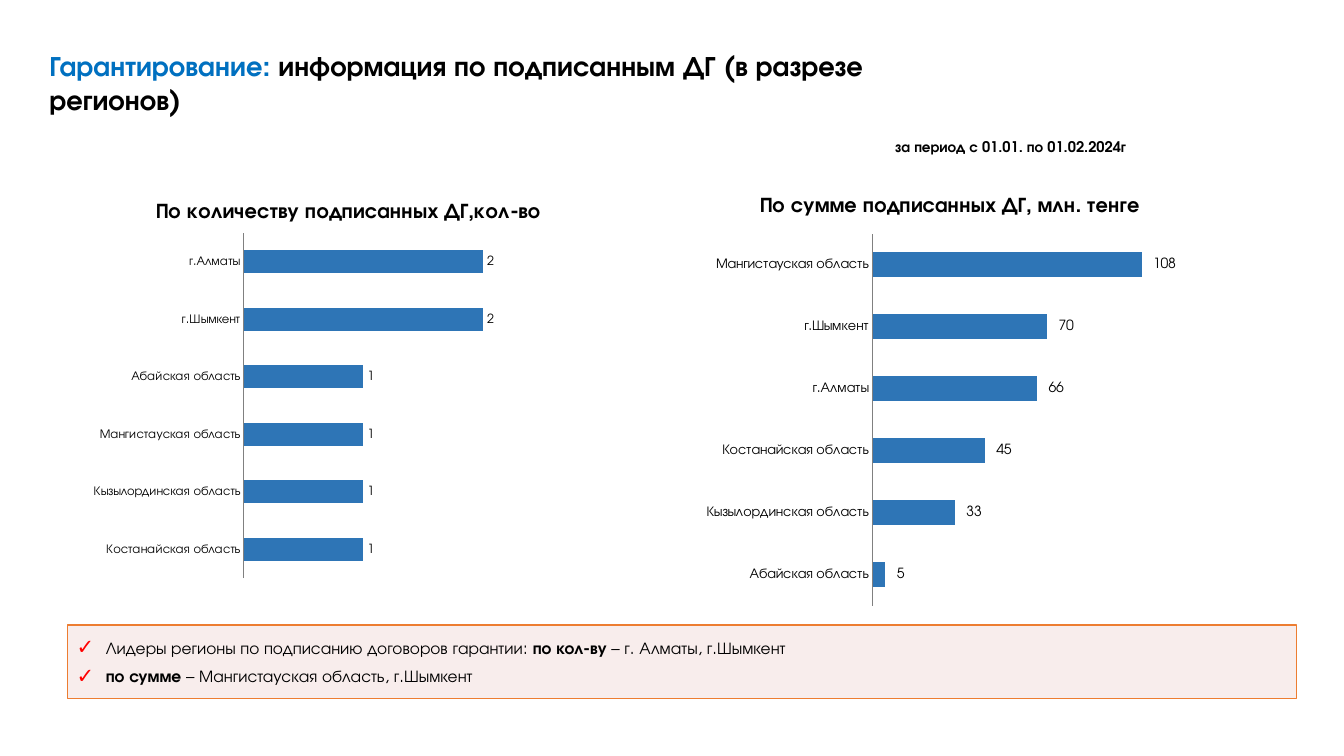
from lxml import etree
from pptx import Presentation
from pptx.chart.data import CategoryChartData
from pptx.dml.color import RGBColor
from pptx.enum.chart import XL_CHART_TYPE, XL_LABEL_POSITION, XL_TICK_LABEL_POSITION, XL_TICK_MARK
from pptx.enum.text import MSO_ANCHOR, MSO_AUTO_SIZE, PP_ALIGN
from pptx.oxml.ns import qn
from pptx.util import Inches, Pt

BAR_CLUSTERED = XL_CHART_TYPE.BAR_CLUSTERED
OUTSIDE_END = XL_LABEL_POSITION.OUTSIDE_END
NO_LABELS = XL_TICK_LABEL_POSITION.NONE
NO_TICKS = XL_TICK_MARK.NONE
TOP, MIDDLE = MSO_ANCHOR.TOP, MSO_ANCHOR.MIDDLE
NO_FIT = MSO_AUTO_SIZE.NONE
LEFT = PP_ALIGN.LEFT

FONT = "TeX Gyre Adventor"
BLACK = RGBColor(0x00, 0x00, 0x00)
BLUE = RGBColor(0x00, 0x70, 0xC0)
BAR_BLUE = RGBColor(0x2E, 0x75, 0xB6)
AXIS_GRAY = RGBColor(0x80, 0x80, 0x80)
ORANGE = RGBColor(0xED, 0x7D, 0x31)
PINK = RGBColor(0xF2, 0xDC, 0xDB)
RED = RGBColor(0xFF, 0x00, 0x00)

TITLE = [[("Гарантирование: ", True, BLUE),
          ("информация по подписанным ДГ (в разрезе регионов)", True, BLACK)]]
PERIOD = [[("за период с 01.01. по 01.02.2024г", True, BLACK)]]
LEADERS = [
    [("Лидеры регионы по подписанию договоров гарантии: ", False, BLACK),
     ("по кол-ву", True, BLACK),
     (" – г. Алматы, г.Шымкент", False, BLACK)],
    [("по сумме ", True, BLACK),
     ("– Мангистауская область, г.Шымкент", False, BLACK)],
]
CHARTS = [
    {"title": "По количеству подписанных ДГ,кол-во",
     "box": (0.76, 1.78, 5.35, 4.1), "size": 9, "maximum": 2.5, "format": "General",
     "title_layout": {"x": 0.14, "y": 0.04},
     "plot_layout": {"x": 0.31, "y": 0.13, "w": 0.555, "h": 0.835},
     "values": {"Костанайская область": 1, "Кызылординская область": 1,
                "Мангистауская область": 1, "Абайская область": 1,
                "г.Шымкент": 2, "г.Алматы": 2}},
    {"title": "По сумме подписанных ДГ, млн. тенге",
     "box": (6.23, 1.71, 6.34, 4.45), "size": 10, "maximum": 120,
     "format": '_-* #\\ ##0_р_._-;\\-* #\\ ##0_р_._-;_-* "-"',
     "title_layout": {"x": 0.2, "y": 0.04},
     "plot_layout": {"x": 0.383, "y": 0.137, "w": 0.467, "h": 0.829},
     "values": {"Абайская область": 5, "Кызылординская область": 33,
                "Костанайская область": 45, "г.Алматы": 66,
                "г.Шымкент": 70, "Мангистауская область": 108}},
]


def place(shape, left, top, width, height):
    shape.left, shape.top = Inches(left), Inches(top)
    shape.width, shape.height = Inches(width), Inches(height)


def format_font(font, size, bold=False, color=BLACK):
    font.name, font.size, font.bold = FONT, Pt(size), bold
    font.color.rgb = color


def add_bullet(paragraph, character):
    properties = paragraph._p.get_or_add_pPr()
    properties.set("marL", str(Inches(0.3)))
    properties.set("indent", str(Inches(-0.29)))
    color = etree.SubElement(properties, qn("a:buClr"))
    etree.SubElement(color, qn("a:srgbClr"), val=str(RED))
    etree.SubElement(properties, qn("a:buSzPct"), val="125000")
    etree.SubElement(properties, qn("a:buChar"), char=character)


def write_text(shape, paragraphs, size, anchor=TOP, wrap=True, bullet=None, space_after=0):
    frame = shape.text_frame
    frame.auto_size, frame.word_wrap, frame.vertical_anchor = NO_FIT, wrap, anchor
    for index, runs in enumerate(paragraphs):
        paragraph = frame.add_paragraph() if index else frame.paragraphs[0]
        paragraph.alignment = LEFT
        paragraph.line_spacing = 1.0
        paragraph.space_before, paragraph.space_after = Pt(0), Pt(space_after)
        if bullet:
            add_bullet(paragraph, bullet)
        for text, bold, color in runs:
            run = paragraph.add_run()
            run.text = text
            format_font(run.font, size, bold, color)


def set_layout(parent, position, shares):
    for existing in parent.findall(qn("c:layout")):
        parent.remove(existing)
    layout = etree.Element(qn("c:layout"))
    manual = etree.SubElement(layout, qn("c:manualLayout"))
    if "w" in shares:
        etree.SubElement(manual, qn("c:layoutTarget"), val="inner")
    for axis in ("x", "y"):
        etree.SubElement(manual, qn(f"c:{axis}Mode"), val="edge")
    for name, share in shares.items():
        etree.SubElement(manual, qn(f"c:{name}"), val=str(share))
    parent.insert(position, layout)


def add_region_chart(slide, content):
    data = CategoryChartData()
    data.categories = list(content["values"])
    data.add_series("Series 1", list(content["values"].values()))
    box = [Inches(length) for length in content["box"]]
    chart = slide.shapes.add_chart(BAR_CLUSTERED, *box, data).chart
    format_font(chart.font, content["size"])
    chart.has_legend = False

    chart.has_title = True
    title = chart.chart_title
    title.include_in_layout = False
    paragraph = title.text_frame.paragraphs[0]
    run = paragraph.add_run()
    run.text = content["title"]
    format_font(run.font, 15, True)
    set_layout(title._element, 1, content["title_layout"])
    set_layout(chart._chartSpace.chart.plotArea, 0, content["plot_layout"])

    categories = chart.category_axis
    categories.major_tick_mark = categories.minor_tick_mark = NO_TICKS
    categories.format.line.color.rgb = AXIS_GRAY
    categories.format.line.width = Pt(0.75)
    format_font(categories.tick_labels.font, content["size"])
    values = chart.value_axis
    values.minimum_scale, values.maximum_scale = 0, content["maximum"]
    values.has_major_gridlines = False
    values.tick_label_position = NO_LABELS
    values.visible = False

    plot = chart.plots[0]
    plot.gap_width = 150
    plot.vary_by_categories = False
    bars = plot.series[0].format.fill
    bars.solid()
    bars.fore_color.rgb = BAR_BLUE
    plot.has_data_labels = True
    labels = plot.data_labels
    labels.show_value = True
    labels.position = OUTSIDE_END
    labels.number_format, labels.number_format_is_linked = content["format"], False
    format_font(labels.font, content["size"])


def main():
    presentation = Presentation()
    presentation.slide_width, presentation.slide_height = Inches(13.33), Inches(7.5)
    slide = presentation.slides.add_slide(presentation.slide_layouts[1])

    title = slide.shapes.title
    place(title, 0.39, 0.43, 9.14, 0.77)
    write_text(title, TITLE, 20)

    period = slide.shapes.add_textbox(Inches(8.78), Inches(1.32), Inches(2.63), Inches(0.28))
    write_text(period, PERIOD, 10.5, wrap=False)

    leaders = slide.placeholders[1]
    place(leaders, 0.67, 6.2, 12.19, 0.73)
    leaders.fill.solid()
    leaders.fill.fore_color.rgb = PINK
    fill_color = leaders._element.spPr.find(qn("a:solidFill"))[0]
    etree.SubElement(fill_color, qn("a:alpha"), val="50000")
    leaders.line.color.rgb = ORANGE
    leaders.line.width = Pt(1)
    frame = leaders.text_frame
    frame.margin_left = frame.margin_right = Inches(0.08)
    frame.margin_top = frame.margin_bottom = Inches(0.04)
    write_text(leaders, LEADERS, 12, anchor=MIDDLE, bullet="✓", space_after=6)

    for content in CHARTS:
        add_region_chart(slide, content)

    presentation.save("out.pptx")


if __name__ == "__main__":
    main()
